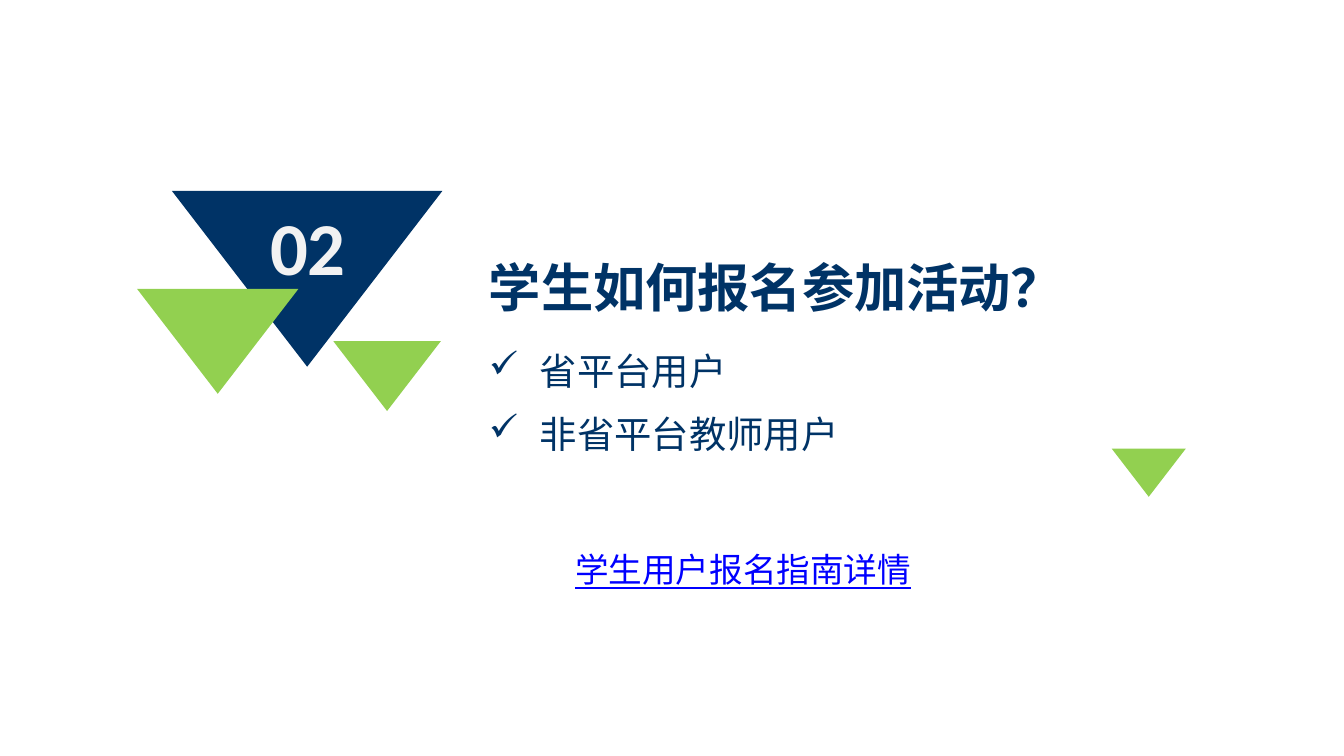
import lxml.etree
import pptx
import pptx.dml.color
import pptx.enum.shapes
import pptx.enum.text
import pptx.oxml.ns
import pptx.util

THEME = {
    "navy": "003366",
    "green": "92D050",
    "light": "F2F2F2",
    "link": "0000FF",
    "latin": "Calibri",
    "chinese": "Noto Sans CJK SC",
    "number_size": 40,
    "title_size": 28,
    "item_size": 20,
    "link_size": 18,
}

TRIANGLES = [
    (3.25, 3.61, 5.11, "navy"),
    (2.59, 5.46, 3.05, "green"),
    (6.3, 6.45, 2.03, "green"),
    (21.01, 8.48, 1.4, "green"),
]
TRIANGLE_RATIO = 0.65

NUMBER = "02"
TITLE = "学生如何报名参加活动？"
ITEMS = [("省平台用户", 7.44), ("非省平台教师用户", 14.33)]
GUIDE = "学生用户报名指南详情"

TEXT_LEFT = 8.99
ITEM_TOP = 6.45
ITEM_STEP = 1.2
ITEM_HEIGHT = 1.12
ITEM_INDENT = 0.96

FORMATS = {
    "number": {"name": THEME["latin"], "size": THEME["number_size"], "color": "light", "bold": True},
    "title": {"name": THEME["chinese"], "size": THEME["title_size"], "color": "navy", "bold": True},
    "item": {"name": THEME["chinese"], "size": THEME["item_size"], "color": "navy"},
    "link": {"name": THEME["latin"], "size": THEME["link_size"], "color": "link", "underline": True},
}


def theme_color(name):
    return pptx.dml.color.RGBColor.from_string(THEME[name])


def lengths(*values):
    return [pptx.util.Cm(value) for value in values]


def add_triangle(slide, left, top, width, color):
    kind = pptx.enum.shapes.MSO_SHAPE.ISOSCELES_TRIANGLE
    shape = slide.shapes.add_shape(kind, *lengths(left, top, width, width * TRIANGLE_RATIO))
    shape.rotation = 180
    shape.shadow.inherit = False
    shape.fill.solid()
    shape.fill.fore_color.rgb = theme_color(color)
    shape.line.fill.background()


def add_text(slide, text, box, style):
    shape = slide.shapes.add_textbox(*lengths(*box))
    shape.text_frame.word_wrap = True
    paragraph = shape.text_frame.paragraphs[0]
    run = paragraph.add_run()
    run.text = text
    for attribute, value in FORMATS[style].items():
        if attribute == "color":
            run.font.color.rgb = theme_color(value)
        else:
            setattr(run.font, attribute, pptx.util.Pt(value) if attribute == "size" else value)
    properties = run._r.get_or_add_rPr()
    east_asian = lxml.etree.SubElement(properties, pptx.oxml.ns.qn("a:ea"))
    east_asian.set("typeface", THEME["chinese"])
    return paragraph


def add_check_mark(paragraph):
    properties = paragraph._p.get_or_add_pPr()
    indent = pptx.util.Cm(ITEM_INDENT)
    properties.set("marL", str(indent))
    properties.set("indent", str(-indent))
    bullet = lxml.etree.SubElement(properties, pptx.oxml.ns.qn("a:buChar"))
    bullet.set("char", "✓")


def main():
    presentation = pptx.Presentation()
    presentation.slide_width, presentation.slide_height = lengths(25.4, 14.29)
    slide = presentation.slides.add_slide(presentation.slide_layouts[6])

    for triangle in TRIANGLES:
        add_triangle(slide, *triangle)

    number = add_text(slide, NUMBER, (4.32, 3.68, 3, 1.96), "number")
    number.alignment = pptx.enum.text.PP_ALIGN.CENTER
    add_text(slide, TITLE, (TEXT_LEFT, 4.7, 11.4, 1.45), "title")
    for index, (text, width) in enumerate(ITEMS):
        box = (TEXT_LEFT, ITEM_TOP + index * ITEM_STEP, width, ITEM_HEIGHT)
        add_check_mark(add_text(slide, text, box, "item"))
    add_text(slide, GUIDE, (10.62, 10.26, 8.18, 1.02), "link")

    presentation.save("out.pptx")


if __name__ == "__main__":
    main()
